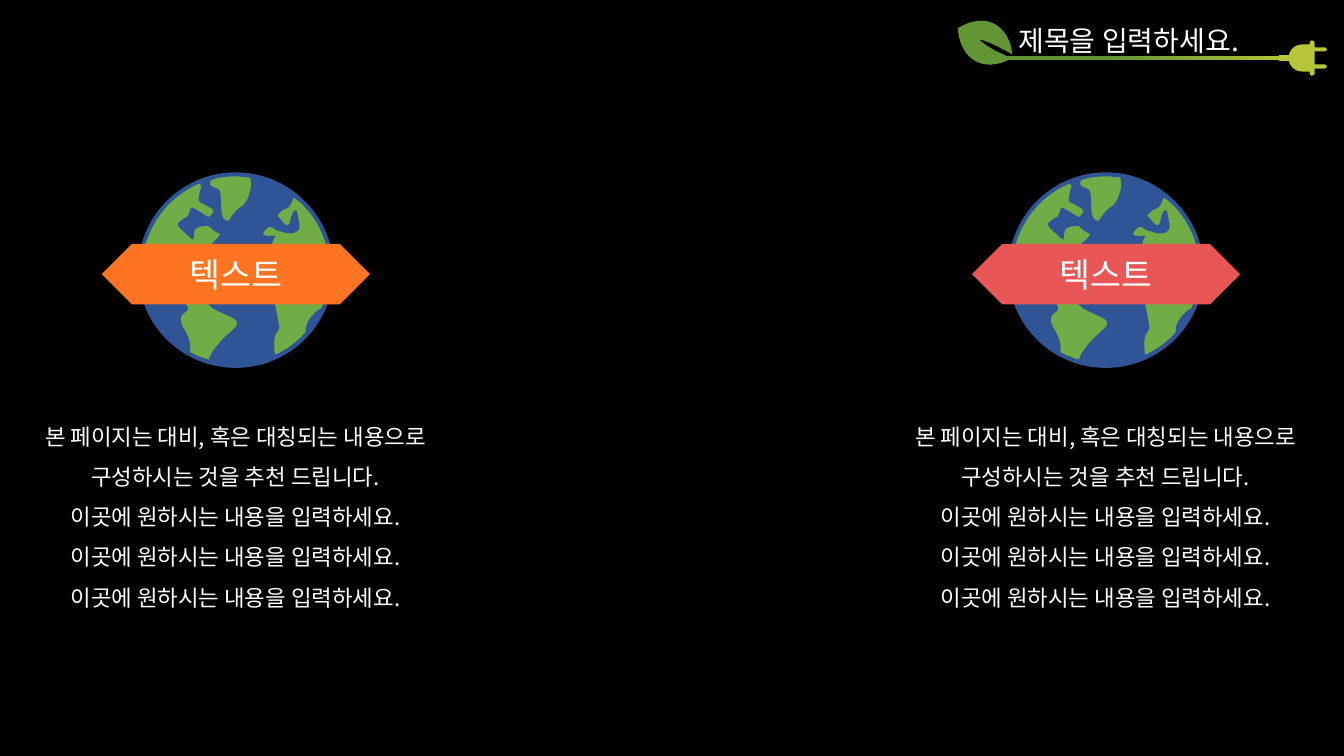
from lxml import etree
from pptx import Presentation
from pptx import util as u
from pptx.dml.color import RGBColor
from pptx.enum import shapes, text
from pptx.oxml import ns

FONT = "Noto Sans CJK KR"
BLACK = RGBColor(0x00, 0x00, 0x00)
WHITE = RGBColor(0xFF, 0xFF, 0xFF)
LAND = RGBColor(0x70, 0xAD, 0x47)
OCEAN = RGBColor(0x2F, 0x55, 0x97)
LEAF = RGBColor(0x62, 0x95, 0x35)
PLUG = RGBColor(0xB6, 0xC6, 0x38)
ORANGE = RGBColor(0xFF, 0x74, 0x21)
RED = RGBColor(0xE8, 0x56, 0x55)

# Outlines in hundredths of an inch: a pair is a point, six numbers a Bézier curve.
# Coasts run straight where the banner covers them.
GLOBE_RIM = [(234, 171), (180, 171, 137, 215, 137, 268), (137, 322, 180, 365, 234, 365),
             (287, 365, 331, 322, 331, 268), (331, 215, 287, 171, 234, 171)]
EAST = [(319, 306), (315, 307, 310, 312, 306, 318), (303, 324, 303, 326, 303, 330),
        (295, 339, 285, 347, 273, 352), (272, 350, 272, 343, 272, 338),
        (272, 331, 277, 328, 277, 325), (277, 323, 274, 307, 272, 299), (270, 241),
        (272, 234, 274, 234, 274, 234), (265, 234), (256, 234, 265, 225, 268, 225),
        (271, 225, 274, 230, 280, 230), (280, 230, 288, 234, 294, 230),
        (300, 226, 296, 220, 295, 212), (294, 204, 289, 211, 288, 219),
        (287, 227, 282, 222, 282, 222), (275, 214), (275, 214, 280, 207, 284, 207),
        (288, 207, 291, 196, 291, 196), (291, 196, 294, 198, 298, 201),
        (316, 218, 327, 242, 327, 268), (327, 282, 324, 294, 319, 306)]
WEST = [(217, 341), (210, 349, 208, 354, 207, 357), (201, 355, 195, 353, 189, 350),
        (189, 348), (189, 342, 189, 338, 183, 327), (176, 317, 180, 311, 185, 309),
        (188, 307, 188, 301, 174, 295), (141, 259),
        (145, 224, 167, 195, 198, 182), (200, 185), (200, 185, 197, 192, 197, 199),
        (198, 202, 197, 199, 210, 207), (214, 210, 210, 211, 209, 214),
        (208, 217, 204, 214, 198, 210), (191, 206), (186, 209, 191, 206, 186, 215),
        (186, 215, 183, 216, 178, 220), (173, 224, 181, 228, 190, 237),
        (193, 241, 192, 232, 193, 229), (194, 226, 196, 225, 205, 224),
        (208, 223, 210, 229, 216, 231), (222, 232, 215, 236, 205, 247), (206, 301),
        (211, 307, 215, 308, 230, 315), (244, 322, 227, 328, 217, 341)]
NORTH = [(248, 190), (246, 196, 245, 202, 238, 206), (232, 210, 227, 219, 227, 219),
         (217, 221, 220, 200, 219, 196), (218, 192, 220, 189, 215, 187),
         (210, 185, 207, 185, 209, 179), (216, 176, 225, 175, 234, 175),
         (239, 175, 243, 176, 248, 176), (249, 178, 250, 185, 248, 190)]
LEAF_BLADE = [(991, 52), (982, 48, 975, 43, 971, 39), (976, 40, 984, 43, 993, 48),
              (997, 50, 1001, 52, 1004, 54), (1003, 41, 997, 30, 987, 24),
              (976, 18, 963, 20, 950, 28), (951, 43, 957, 55, 968, 61),
              (978, 66, 991, 65, 1003, 58), (999, 56, 995, 54, 991, 52)]
PLUG_NECK = [(1269, 61), (1282, 61), (1282, 55), (1269, 55)]
PLUG_HEAD = [(1301, 40), (1303, 40, 1304, 41, 1304, 43), (1304, 73),
             (1304, 74, 1303, 75, 1301, 75), (1300, 75, 1299, 74, 1299, 73),
             (1299, 71), (1292, 71), (1284, 71, 1278, 65, 1278, 58),
             (1278, 50, 1284, 44, 1292, 44), (1299, 44), (1299, 43),
             (1299, 41, 1300, 40, 1301, 40)]
PLUG_PRONGS = [[(1316, y), (1316, y - 1, 1315, y - 2, 1314, y - 2), (1296, y - 2),
                (1296, y + 2), (1314, y + 2), (1315, y + 2, 1316, y + 1, 1316, y)]
               for y in (66, 49)]

deck = Presentation()
deck.slide_width, deck.slide_height = u.Inches(13.33), u.Inches(7.5)
slide = deck.slides.add_slide(deck.slide_layouts[3])
slide.background.fill.solid()
slide.background.fill.fore_color.rgb = BLACK


def draw_outline(contours, color, shift=0):
    """Draw closed contours as one filled shape, moved right by shift inches."""
    builder = None
    for contour in contours:
        places = [(u.Inches(s[-2] / 100 + shift), u.Inches(s[-1] / 100)) for s in contour]
        if builder is None:
            builder = slide.shapes.build_freeform(*places[0], scale=1.0)
        else:
            builder.move_to(*places[0])
        builder.add_line_segments(places[1:], close=False)
        builder.add_line_segments([], close=True)
    outline = builder.convert_to_shape()
    outline.shadow.inherit = False
    outline.fill.solid()
    outline.fill.fore_color.rgb = color
    outline.line.fill.background()

    # Bend the segments that have control points
    segments = [s for contour in contours for s in contour[1:]]
    for segment, line in zip(segments, list(outline._element.iter(ns.qn("a:lnTo")))):
        if len(segment) == 6:
            line.tag = ns.qn("a:cubicBezTo")
            for index in (0, 1):
                control = etree.Element(ns.qn("a:pt"))
                x, y = segment[2 * index:2 * index + 2]
                control.set("x", str(u.Inches(x / 100 + shift) - outline.left))
                control.set("y", str(u.Inches(y / 100) - outline.top))
                line.insert(index, control)


def style_paragraph(paragraph, size, align):
    paragraph.alignment = align
    paragraph.font.size = u.Pt(size)
    paragraph.font.color.rgb = WHITE
    paragraph.font.name = FONT
    defaults = paragraph._p.pPr.find(ns.qn("a:defRPr"))
    etree.SubElement(defaults, ns.qn("a:ea")).set("typeface", FONT)


# Heading
heading, *bodies = slide.placeholders
heading.left, heading.top = u.Inches(10), u.Inches(0.18)
heading.width, heading.height = u.Inches(2.61), u.Inches(0.44)
heading.text_frame.text = "제목을 입력하세요."
heading.text_frame.word_wrap = False
heading.text_frame.auto_size = text.MSO_AUTO_SIZE.NONE
heading.text_frame.vertical_anchor = text.MSO_ANCHOR.TOP
style_paragraph(heading.text_frame.paragraphs[0], 20, text.PP_ALIGN.LEFT)

# Leaf, cable and plug under the heading
cable = slide.shapes.add_shape(shapes.MSO_SHAPE.RECTANGLE, u.Inches(9.88), u.Inches(0.56),
                               u.Inches(2.91), u.Inches(0.04))
cable.shadow.inherit = False
cable.line.fill.background()
cable.fill.gradient()
cable.fill.gradient_angle = 0
for stop, position, color in zip(cable.fill.gradient_stops, (0.38, 1), (LEAF, PLUG)):
    stop.position, stop.color.rgb = position, color
draw_outline([LEAF_BLADE], LEAF)
for contours in ([PLUG_NECK], [PLUG_HEAD], PLUG_PRONGS):
    draw_outline(contours, PLUG)

# Two contrasting columns: globe, banner and text
COLUMN_WIDTH, COLUMN_STEP = 4.67, 8.63
LINES = ["본 페이지는 대비, 혹은 대칭되는 내용으로 구성하시는 것을 추천 드립니다.",
         *["이곳에 원하시는 내용을 입력하세요."] * 3]
for column, (body, banner_color) in enumerate(zip(bodies, (ORANGE, RED))):
    left = column * COLUMN_STEP

    land = slide.shapes.add_shape(shapes.MSO_SHAPE.OVAL, u.Inches(left + 1.4), u.Inches(1.74),
                                  u.Inches(1.87), u.Inches(1.87))
    draw_outline([GLOBE_RIM, EAST, WEST, NORTH], OCEAN, left)
    banner = slide.shapes.add_shape(shapes.MSO_SHAPE.SNIP_2_DIAG_RECTANGLE,
                                    u.Inches(left + 1.01), u.Inches(2.42),
                                    u.Inches(2.66), u.Inches(0.6))
    banner.adjustments[0] = banner.adjustments[1] = 0.5
    for part, color in ((land, LAND), (banner, banner_color)):
        part.shadow.inherit = False
        part.fill.solid()
        part.fill.fore_color.rgb = color
        part.line.fill.background()
    banner.text_frame.text = "텍스트"
    banner.text_frame.vertical_anchor = text.MSO_ANCHOR.MIDDLE
    style_paragraph(banner.text_frame.paragraphs[0], 24, text.PP_ALIGN.CENTER)

    body.left, body.top = u.Inches(left), u.Inches(4.01)
    body.width, body.height = u.Inches(COLUMN_WIDTH), u.Inches(2.52)
    body.text_frame.text = "\n".join(LINES)
    body.text_frame.auto_size = text.MSO_AUTO_SIZE.NONE
    for paragraph in body.text_frame.paragraphs:
        paragraph.line_spacing = 1.5
        paragraph.space_before = u.Pt(0)
        indents = paragraph._p.get_or_add_pPr()
        indents.set("marL", "0")
        indents.set("indent", "0")
        etree.SubElement(indents, ns.qn("a:buNone"))
        style_paragraph(paragraph, 16, text.PP_ALIGN.CENTER)

deck.save("out.pptx")
